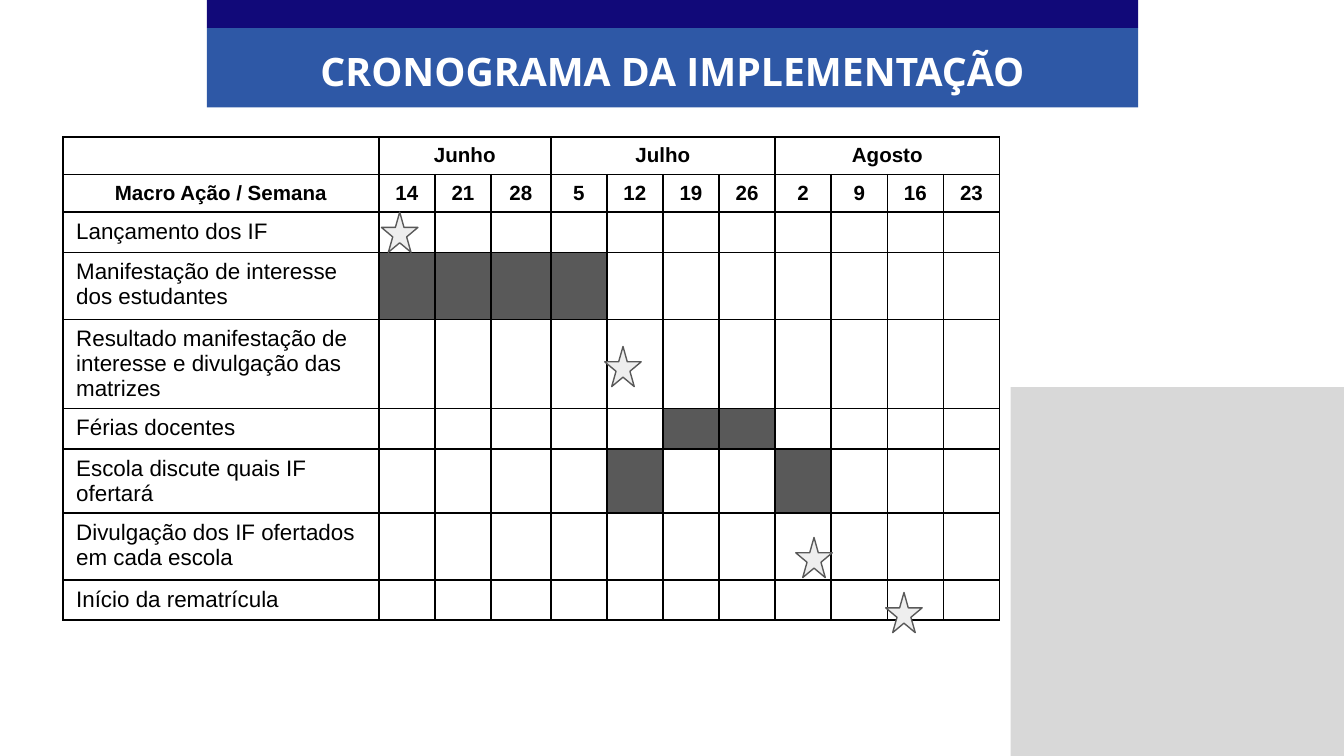
from dataclasses import dataclass

from lxml.etree import SubElement
from pptx import Presentation
from pptx.dml.color import RGBColor
from pptx.enum.shapes import MSO_SHAPE as SHAPE
from pptx.enum.text import MSO_ANCHOR as ANCHOR, MSO_AUTO_SIZE as AUTO, PP_ALIGN as ALIGN
from pptx.oxml.ns import qn
from pptx.util import Cm, Pt


@dataclass(frozen=True)
class Theme:
    white: str = "FFFFFF"
    black: str = "000000"
    navy: str = "110979"
    blue: str = "2E58A6"
    busy: str = "595959"
    star: str = "EEEEEE"
    panel: str = "BFBFBF"
    body_font: str = "Arial"
    title_font: str = "Open Sans"
    title_size: float = 21
    head_size: float = 11
    body_size: float = 12
    border: float = 1
    outline: float = 0.75


THEME = Theme()
LABEL_WIDTH, WEEK_WIDTH, WIDE_WEEK_WIDTH = 5.97, 1.06, 1.13
HEAD_HEIGHT = 0.71
MONTHS = [("Junho", 3), ("Julho", 4), ("Agosto", 4)]
WEEKS = ["14", "21", "28", "5", "12", "19", "26", "2", "9", "16", "23"]
ACTIONS = [
    ("Lançamento dos IF", 0.76, []),
    ("Manifestação de interesse dos estudantes", 1.27, ["14", "21", "28", "5"]),
    ("Resultado manifestação de interesse e divulgação das matrizes", 1.67, []),
    ("Férias docentes", 0.76, ["19", "26"]),
    ("Escola discute quais IF ofertará", 1.21, ["12", "2"]),
    ("Divulgação dos IF ofertados em cada escola", 1.27, []),
    ("Início da rematrícula", 0.76, []),
]
MILESTONES = [(7.21, 4.01), (11.43, 6.55), (15.04, 10.16), (16.74, 11.2)]


def rgb(color):
    return RGBColor.from_string(color)


def style_text(p, font, size, color, bold=False, align=ALIGN.LEFT):
    p.alignment = align
    p.font.name, p.font.size, p.font.bold = font, Pt(size), bold
    p.font.color.rgb = rgb(color)


def add_box(shapes, kind, x, y, w, h, fill, line=None):
    sp = shapes.add_shape(kind, Cm(x), Cm(y), Cm(w), Cm(h))
    sp.shadow.inherit = False
    sp.fill.solid()
    sp.fill.fore_color.rgb = rgb(fill)
    if line:
        sp.line.color.rgb = rgb(line)
        sp.line.width = Pt(THEME.outline)
    else:
        sp.line.fill.background()
    return sp


def set_borders(cell):
    tc_pr = cell._tc.get_or_add_tcPr()
    for side in ("a:lnL", "a:lnR", "a:lnT", "a:lnB"):
        ln = SubElement(tc_pr, qn(side), w=str(Pt(THEME.border)))
        fill = SubElement(ln, qn("a:solidFill"))
        SubElement(fill, qn("a:srgbClr"), val=THEME.black)


def fill_cell(cell, text="", head=False, color=THEME.white):
    set_borders(cell)
    cell.fill.solid()
    cell.fill.fore_color.rgb = rgb(color)
    cell.margin_left = cell.margin_right = Cm(0.25)
    cell.margin_top = cell.margin_bottom = Cm(0.13)
    cell.text = text
    size = THEME.head_size if head else THEME.body_size
    align = ALIGN.CENTER if head else ALIGN.LEFT
    style_text(cell.text_frame.paragraphs[0], THEME.body_font, size, THEME.black, head, align)


def add_schedule(s):
    widths = [LABEL_WIDTH] + [WIDE_WEEK_WIDTH if w == "28" else WEEK_WIDTH for w in WEEKS]
    heights = [HEAD_HEIGHT] * 2 + [height for _, height, _ in ACTIONS]
    table = s.shapes.add_table(len(heights), len(widths), Cm(1.19), Cm(2.59),
                               Cm(sum(widths)), Cm(sum(heights))).table
    table.first_row = table.horz_banding = False
    for column, width in zip(table.columns, widths):
        column.width = Cm(width)
    for row, height in zip(table.rows, heights):
        row.height = Cm(height)

    months = [""]
    for month, span in MONTHS:
        first = len(months)
        table.cell(0, first).merge(table.cell(0, first + span - 1))
        months += [month] + [""] * (span - 1)
    for row, texts in enumerate([months, ["Macro Ação / Semana"] + WEEKS]):
        for col, text in enumerate(texts):
            fill_cell(table.cell(row, col), text, head=True)
    for row, (action, _, busy_weeks) in enumerate(ACTIONS, 2):
        fill_cell(table.cell(row, 0), action)
        for col, week in enumerate(WEEKS, 1):
            color = THEME.busy if week in busy_weeks else THEME.white
            fill_cell(table.cell(row, col), color=color)


def add_title(s, text):
    x, w = 3.91, 17.6
    banner = s.shapes.add_group_shape()
    add_box(banner.shapes, SHAPE.RECTANGLE, x, 0.53, w, 1.5, THEME.blue)
    add_box(banner.shapes, SHAPE.RECTANGLE, x, 0, w, 0.53, THEME.navy)
    title = s.shapes.title
    title.left, title.top, title.width, title.height = Cm(x), Cm(0.76), Cm(w), Cm(1.14)
    tf = title.text_frame
    tf.text = text
    tf.auto_size = AUTO.NONE
    tf.vertical_anchor = ANCHOR.MIDDLE
    style_text(tf.paragraphs[0], THEME.title_font, THEME.title_size, THEME.white, True, ALIGN.CENTER)
    banner.element.addnext(title.element)


def add_milestone(s, x, y):
    add_box(s.shapes, SHAPE.STAR_5_POINT, x, y, 0.69, 0.76, THEME.star, THEME.busy)


def add_side_panel(s):
    sp = add_box(s.shapes, SHAPE.RECTANGLE, 19.1, 7.32, 6.3, 7.14, THEME.panel)
    color = sp.element.spPr.find(qn("a:solidFill"))[0]
    SubElement(color, qn("a:alpha"), val="60000")


def main():
    prs = Presentation()
    prs.slide_width, prs.slide_height = Cm(25.4), Cm(14.29)
    s = prs.slides.add_slide(prs.slide_layouts[5])
    add_schedule(s)
    add_title(s, "CRONOGRAMA DA IMPLEMENTAÇÃO")
    for x, y in MILESTONES:
        add_milestone(s, x, y)
    add_side_panel(s)
    prs.save("out.pptx")


if __name__ == "__main__":
    main()
